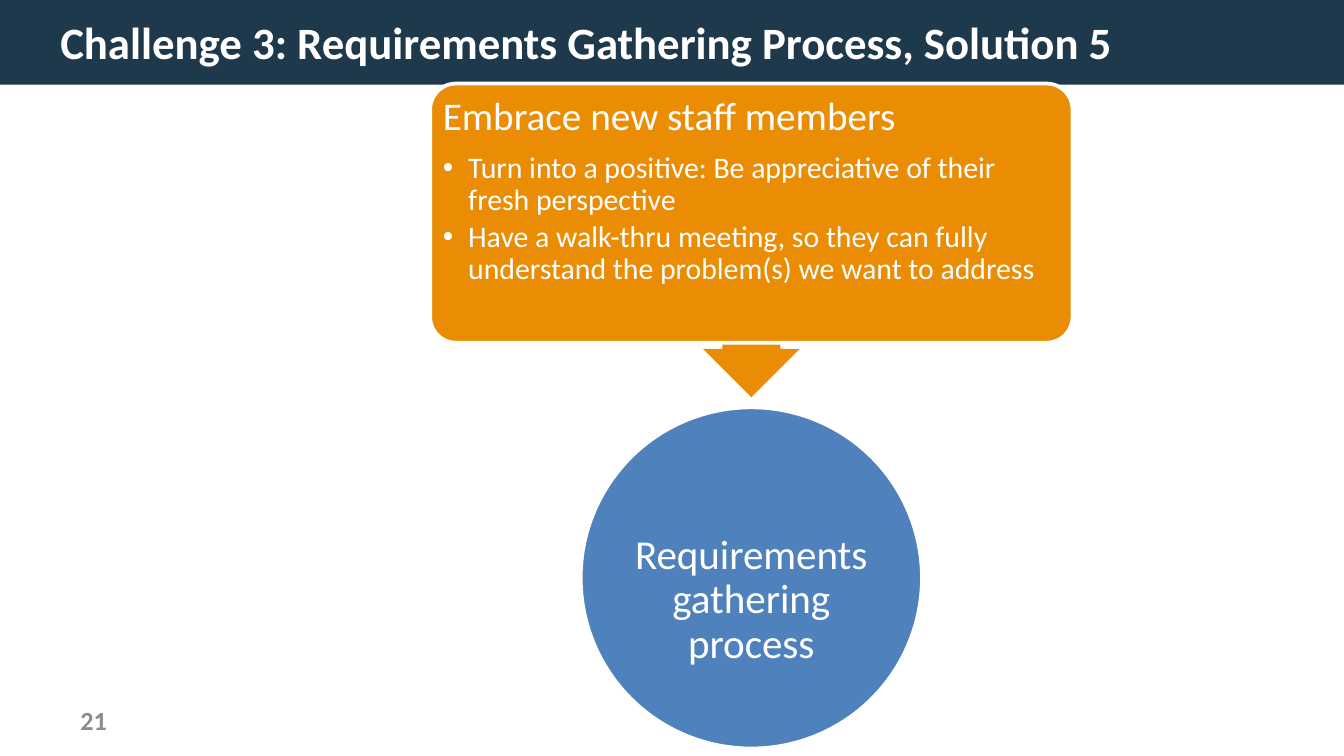
from lxml.etree import SubElement
from pptx import Presentation
from pptx.dml.color import RGBColor
from pptx.enum.shapes import MSO_SHAPE as Preset
from pptx.enum.text import MSO_ANCHOR as Anchor, PP_ALIGN as Align
from pptx.oxml.ns import qn
from pptx.util import Cm, Pt

COLORS = {
    "navy": "1E384C",
    "orange": "EA8D04",
    "blue": "4F81BD",
    "white": "FFFFFF",
    "gray": "8C8C8C",
}
FONT = "Calibri"
CENTER = 14.2


def color(name):
    return RGBColor.from_string(COLORS[name])


def write(para, text, size, ink="white", bold=False, align=Align.LEFT,
          line=1.0, after=0, bullet=None, indent=0.48):
    para.alignment = align
    para.line_spacing = line
    para.space_after = Pt(after)
    if bullet:
        props = para._p.get_or_add_pPr()
        props.set("marL", str(Cm(indent)))
        props.set("indent", str(-Cm(indent)))
        SubElement(props, qn("a:buFont"), typeface="Arial")
        SubElement(props, qn("a:buChar"), char=bullet)
    span = para.add_run()
    span.text = text
    span.font.name = FONT
    span.font.size = Pt(size)
    span.font.bold = bold
    span.font.color.rgb = color(ink)


class SlideBuilder:
    def __init__(self, page):
        self.page = page

    def shape(self, preset, left, top, width, height, fill, outline=None, adjust=()):
        shape = self.page.shapes.add_shape(
            preset, Cm(left), Cm(top), Cm(width), Cm(height))
        shape.shadow.inherit = False
        shape.fill.solid()
        shape.fill.fore_color.rgb = color(fill)
        if outline:
            shape.line.color.rgb = color(outline)
            shape.line.width = Pt(2)
        else:
            shape.line.fill.background()
        for index, value in enumerate(adjust):
            shape.adjustments[index] = value

    def text(self, left, top, width, height, items,
             anchor=Anchor.MIDDLE, insets=(0.25, 0.13, 0.25, 0.13)):
        box = self.page.shapes.add_textbox(Cm(left), Cm(top), Cm(width), Cm(height))
        frame = box.text_frame
        frame.word_wrap = True
        frame.vertical_anchor = anchor
        frame.margin_left, frame.margin_top, frame.margin_right, frame.margin_bottom = map(
            Cm, insets)
        for index, (text, style) in enumerate(items):
            para = frame.add_paragraph() if index else frame.paragraphs[0]
            write(para, text, **style)


def main():
    deck = Presentation()
    deck.slide_width, deck.slide_height = Cm(25.4), Cm(14.29)
    builder = SlideBuilder(deck.slides.add_slide(deck.slide_layouts[6]))

    builder.shape(Preset.RECTANGLE, 0, 0, 25.4, 1.6, "navy")
    builder.text(1.27, 13.23, 5.72, 0.76,
                 [("21", dict(size=14, ink="gray", bold=True))])
    builder.text(0.89, 0.13, 23.24, 1.32, [
        ("Challenge 3: Requirements Gathering Process, Solution 5",
         dict(size=24, bold=True))])

    circle, label, arrow, card = 6.45, 4.55, 1.83, 12.14
    builder.shape(Preset.OVAL, CENTER - circle / 2, 7.7, circle, circle, "blue", "white")
    builder.text(CENTER - label / 2, 8.66, label, label, [
        ("Requirements gathering process",
         dict(size=22, align=Align.CENTER, line=0.9))],
        insets=(0.05, 0.89, 0.05, 0.05))

    builder.shape(Preset.DOWN_ARROW, CENTER - arrow / 2, 4.03, arrow, 3.48,
                  "orange", adjust=(0.6, 0.5))
    builder.shape(Preset.ROUNDED_RECTANGLE, CENTER - card / 2, 1.58, card, 4.9,
                  "orange", "white", adjust=(0.1,))
    point = dict(size=16, line=0.9, after=2.4, bullet="•")
    builder.text(8.27, 1.73, 11.84, 4.6, [
        ("Embrace new staff members", dict(size=21, line=0.9, after=7.4)),
        ("Turn into a positive: Be appreciative of their fresh perspective", point),
        ("Have a walk-thru meeting, so they can fully understand the problem(s) "
         "we want to address", point)],
        anchor=Anchor.TOP, insets=(0.1, 0.1, 0.1, 0.1))

    deck.save("out.pptx")


if __name__ == "__main__":
    main()
